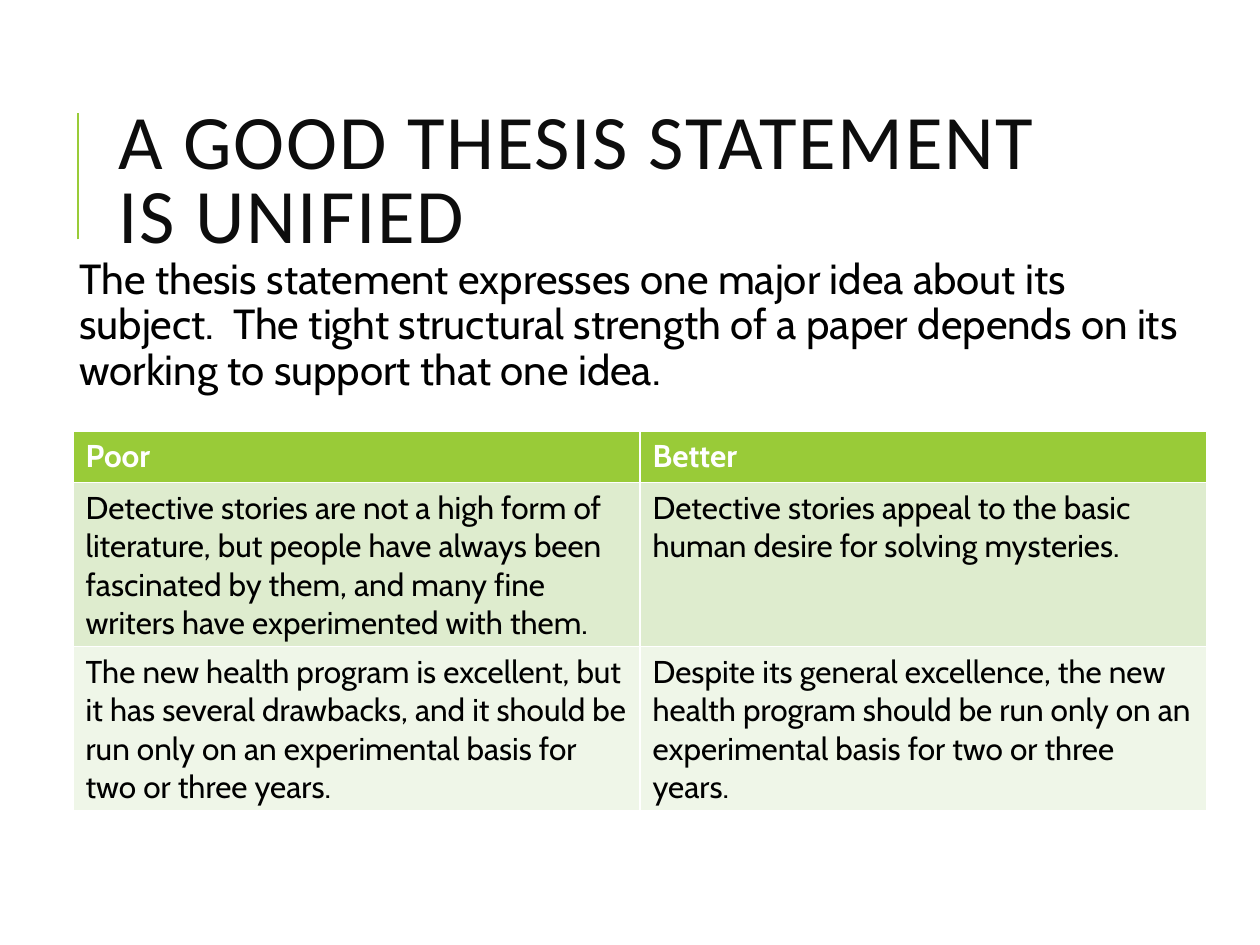
from pptx import Presentation
from pptx.dml.color import RGBColor
from pptx.enum.shapes import MSO_CONNECTOR
from pptx.enum.text import MSO_ANCHOR
from pptx.oxml.ns import qn
from pptx.util import Inches, Pt
from lxml.etree import SubElement

GREEN, WHITE, BLACK, INK = "99CB38", "FFFFFF", "000000", "0D0D0D"
BAND_FILLS = ("DEECCE", "EFF6E8")
HEADINGS = ("Poor", "Better")
EXAMPLES = (
    ("Detective stories are not a high form of literature, but people have always "
     "been fascinated by them, and many fine writers have experimented with them.",
     "Detective stories appeal to the basic human desire for solving mysteries."),
    ("The new health program is excellent, but it has several drawbacks, and it "
     "should be run only on an experimental basis for two or three years.",
     "Despite its general excellence, the new health program should be run only "
     "on an experimental basis for two or three years."),
)


def color(hex_value):
    return RGBColor.from_string(hex_value)


def write(frame, text, size=18, font="Cabin", fill=BLACK, bold=False,
          line_spacing=None, before=None, after=None, tracking=None):
    """Fill a text frame with one formatted paragraph; tracking is in points."""
    frame.word_wrap = True
    para = frame.paragraphs[0]
    para.line_spacing = line_spacing
    para.space_before = before
    para.space_after = after
    span = para.add_run()
    span.text = text
    span.font.size = Pt(size)
    span.font.name = font
    span.font.bold = bold
    span.font.color.rgb = color(fill)
    if tracking is not None:
        span.font._element.set("spc", str(int(tracking * 100)))


def add_text_box(page, box, text, anchor=MSO_ANCHOR.TOP, inset=None, **style):
    frame = page.shapes.add_textbox(*map(Inches, box)).text_frame
    frame.vertical_anchor = anchor
    if inset is not None:
        frame.margin_left = frame.margin_right = Inches(inset)
        frame.margin_top = frame.margin_bottom = Inches(inset)
    write(frame, text, **style)


def add_title(page, box):
    """Place the title with a vertical accent line to its left."""
    left, top, _, _ = box
    line_x, line_top = left - 0.22, top + 0.26
    line = page.shapes.add_connector(
        MSO_CONNECTOR.STRAIGHT,
        *map(Inches, (line_x, line_top + 1, line_x, line_top)))
    line.line.color.rgb = color(GREEN)
    line.line.width = Pt(1.5)
    SubElement(line._element.spPr, qn("a:effectLst"))
    add_text_box(page, box, "A GOOD THESIS STATEMENT IS UNIFIED",
                 anchor=MSO_ANCHOR.MIDDLE, size=44, font="Calibri", fill=INK,
                 line_spacing=0.8, tracking=1)


def add_explanation(page, box):
    add_text_box(page, box,
                 "The thesis statement expresses one major idea about its subject.  "
                 "The tight structural strength of a paper depends on its working "
                 "to support that one idea.",
                 inset=0.05, size=24, line_spacing=0.9, before=Pt(12), after=Pt(2))


def add_comparison(page, box, header_height=0.41):
    """Place the table; its default style draws the white cell borders."""
    rows = (HEADINGS, *EXAMPLES)
    table = page.shapes.add_table(
        len(rows), len(HEADINGS), *map(Inches, box)).table
    for column in table.columns:
        column.width = Inches(box[2] / len(HEADINGS))
    example_height = (box[3] - header_height) / len(EXAMPLES)
    for index, texts in enumerate(rows):
        is_header = index == 0
        table.rows[index].height = Inches(
            header_height if is_header else example_height)
        for cell, text in zip(table.rows[index].cells, texts):
            cell.fill.solid()
            cell.fill.fore_color.rgb = color(
                GREEN if is_header else BAND_FILLS[index - 1])
            write(cell.text_frame, text, bold=is_header,
                  fill=WHITE if is_header else BLACK)


def main():
    deck = Presentation()
    deck.slide_width, deck.slide_height = Inches(10), Inches(7.5)
    page = deck.slides.add_slide(deck.slide_layouts[6])
    page.background.fill.solid()
    page.background.fill.fore_color.rgb = color(WHITE)
    add_title(page, (0.84, 0.64, 7.97, 1.64))
    add_comparison(page, (0.58, 3.42, 9, 3.01))
    add_explanation(page, (0.58, 2, 9, 1.33))
    deck.save("out.pptx")


if __name__ == "__main__":
    main()
